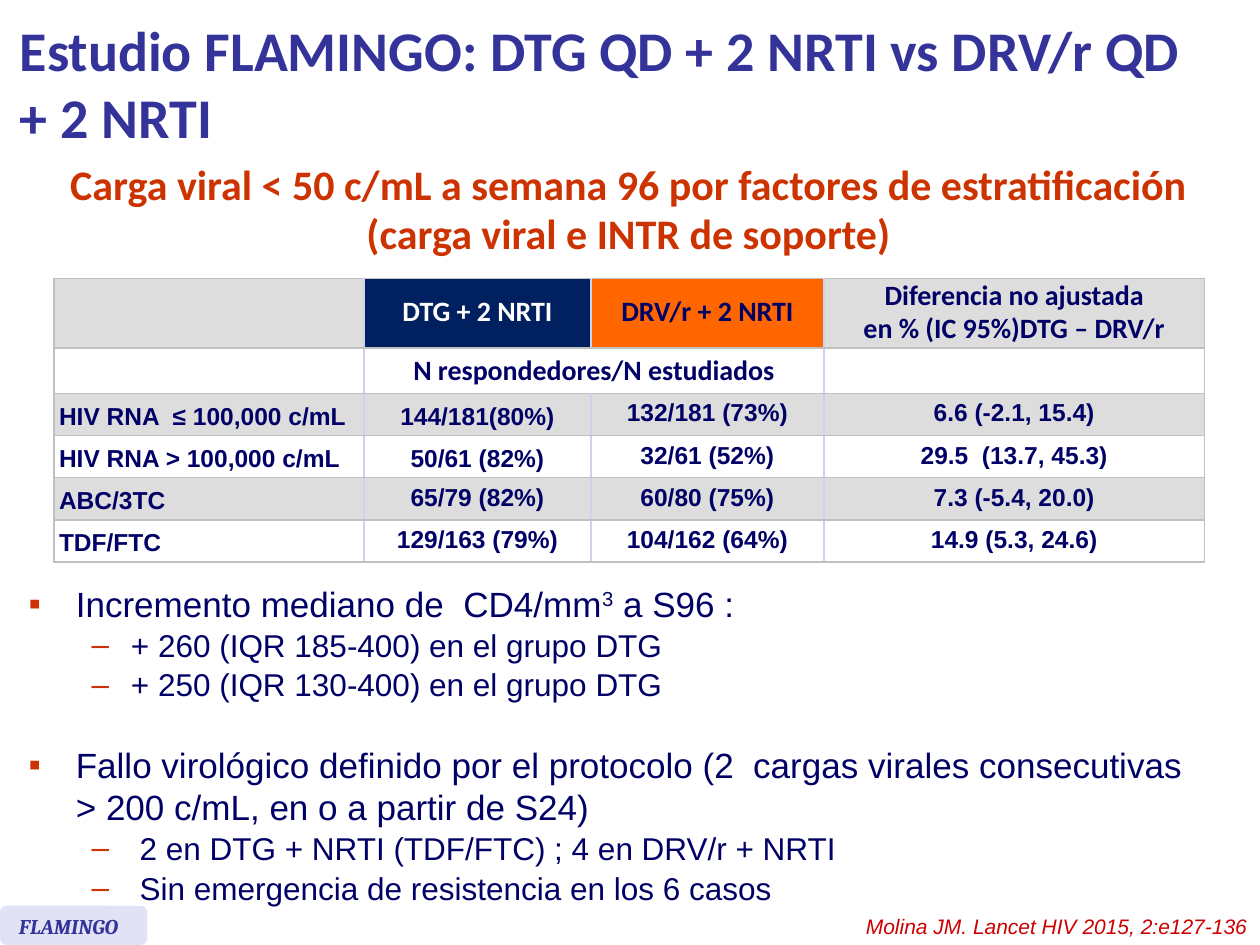
from lxml import etree
from pptx import Presentation
from pptx.dml.color import RGBColor
from pptx.enum import shapes, text
from pptx.oxml.ns import qn
from pptx.util import Cm, Pt

NAVY = RGBColor(0x00, 0x00, 0x66)
INDIGO = RGBColor(0x33, 0x33, 0x99)
RUST = RGBColor(0xCC, 0x33, 0x00)
RED = RGBColor(0xCC, 0x00, 0x00)
WHITE = RGBColor(0xFF, 0xFF, 0xFF)
GREY = RGBColor(0xDD, 0xDD, 0xDD)
DARK_BLUE = RGBColor(0x00, 0x20, 0x60)
ORANGE = RGBColor(0xFF, 0x66, 0x00)
LAVENDER = RGBColor(0xE2, 0xE2, 0xF6)
OUTER_LINE = RGBColor(0xC0, 0xC0, 0xC0)
INNER_LINE = RGBColor(0xD0, 0xD0, 0xF0)

CENTER = text.PP_ALIGN.CENTER
RIGHT = text.PP_ALIGN.RIGHT
MIDDLE = text.MSO_ANCHOR.MIDDLE

COLUMN_WIDTHS = [6.25, 4.57, 4.7, 7.67]
ROW_HEIGHTS = [1.41, 0.91] + [0.85] * 4
ROWS = [
    ["", "DTG + 2 NRTI", "DRV/r + 2 NRTI",
     "Diferencia no ajustada\nen % (IC 95%)DTG – DRV/r"],
    ["", "N respondedores/N estudiados", "", ""],
    ["HIV RNA  ≤ 100,000 c/mL", "144/181(80%)", "132/181 (73%)", "6.6 (-2.1, 15.4)"],
    ["HIV RNA > 100,000 c/mL", "50/61 (82%)", "32/61 (52%)", "29.5  (13.7, 45.3)"],
    ["ABC/3TC", "65/79 (82%)", "60/80 (75%)", "7.3 (-5.4, 20.0)"],
    ["TDF/FTC", "129/163 (79%)", "104/162 (64%)", "14.9 (5.3, 24.6)"],
]
HEADER_FILLS = [GREY, DARK_BLUE, ORANGE, GREY]

# level, space before in points, lines of the paragraph
FINDINGS = [
    (0, 0, ["Incremento mediano de  CD4/mm^3^ a S96 :"]),
    (1, 1, ["+ 260 (IQR 185-400) en el grupo DTG"]),
    (1, 1, ["+ 250 (IQR 130-400) en el grupo DTG"]),
    (0, 23, ["Fallo virológico definido por el protocolo (2  cargas virales consecutivas",
             "> 200 c/mL, en o a partir de S24)"]),
    (1, 1, [" 2 en DTG + NRTI (TDF/FTC) ; 4 en DRV/r + NRTI"]),
    (1, 1, [" Sin emergencia de resistencia en los 6 casos"]),
]
# bullet, left margin, hanging indent, text size
LEVELS = [("▪", Cm(0.95), Cm(0.95), 20), ("–", Cm(2.06), Cm(0.79), 18)]


def add_span(para, words, size, font, color, bold=False, italic=False):
    span = para.add_run()
    span.text = words
    span.font.size = Pt(size)
    span.font.name = font
    span.font.color.rgb = color
    span.font.bold = bold
    span.font.italic = italic
    return span


def add_box(parent, left, top, width, height, wrap=True):
    box = parent.add_textbox(Cm(left), Cm(top), Cm(width), Cm(height))
    box.text_frame.word_wrap = wrap
    return box.text_frame


def add_title(page):
    frame = add_box(page.shapes, 0.15, 0.13, 24.26, 3.07)
    frame.vertical_anchor = MIDDLE
    para = frame.paragraphs[0]
    add_span(para, "Estudio FLAMINGO: DTG QD + 2 NRTI vs DRV/r QD", 32, "Calibri", INDIGO, True)
    para.add_line_break()
    add_span(para, "+ 2 NRTI", 32, "Calibri", INDIGO, True)


def add_subtitle(page):
    frame = add_box(page.shapes, 0.86, 3.12, 23.62, 3.25, wrap=False)
    lines = ["Carga viral < 50 c/mL a semana 96 por factores de estratificación",
             "(carga viral e INTR de soporte)"]
    for index, line in enumerate(lines):
        para = frame.add_paragraph() if index else frame.paragraphs[0]
        para.alignment = CENTER
        para.line_spacing = Pt(27.6)
        add_span(para, line, 24, "Calibri", RUST, True)


def add_study_tag(page):
    group = page.shapes.add_group_shape()
    tag = group.shapes.add_shape(shapes.MSO_SHAPE.ROUNDED_RECTANGLE,
                                 Cm(0), Cm(18.26), Cm(2.97), Cm(0.79))
    tag.shadow.inherit = False
    tag.fill.solid()
    tag.fill.fore_color.rgb = LAVENDER
    tag.line.fill.background()
    frame = add_box(group.shapes, 0.13, 18.29, 2.84, 0.76)
    add_span(frame.paragraphs[0], "FLAMINGO", 12, "Cambria", INDIGO, True, True)


def set_borders(cell, colors):
    """Draw 1 pt lines; colors go left, right, top, bottom."""
    properties = cell._tc.get_or_add_tcPr()
    for side, color in zip("LRTB", colors):
        line = etree.SubElement(properties, qn(f"a:ln{side}"), w=str(Pt(1)))
        fill = etree.SubElement(line, qn("a:solidFill"))
        etree.SubElement(fill, qn("a:srgbClr"), val=str(color))


def fill_cell(cell, row, column):
    first, last = column == 0, column == len(COLUMN_WIDTHS) - 1
    set_borders(cell, [OUTER_LINE if first else INNER_LINE,
                       OUTER_LINE if last else INNER_LINE, OUTER_LINE, OUTER_LINE])
    cell.fill.solid()
    banded = WHITE if row % 2 else GREY
    cell.fill.fore_color.rgb = banded if row else HEADER_FILLS[column]
    cell.margin_left = cell.margin_right = cell.margin_top = cell.margin_bottom = Cm(0.1)
    cell.vertical_anchor = MIDDLE
    size, font = (16, "Calibri") if row < 2 else (14, "Arial")
    color = WHITE if (row, column) == (0, 1) else NAVY
    fixed_pitch = row > 1 and (first or (column == 1 and row < 4))
    for index, line in enumerate(ROWS[row][column].split("\n")):
        para = cell.text_frame.add_paragraph() if index else cell.text_frame.paragraphs[0]
        if not line:
            para.font.size = Pt(size)
            continue
        if not first:
            para.alignment = CENTER
        para.line_spacing = Pt(18.2) if fixed_pitch else 0.9 if row else 0.8
        if index:
            para.space_before = Pt(3.2)
        add_span(para, line, size, font, color, True)


def add_results_table(page):
    frame = page.shapes.add_table(len(ROWS), len(COLUMN_WIDTHS), Cm(1.09), Cm(5.61),
                                  Cm(sum(COLUMN_WIDTHS)), Cm(sum(ROW_HEIGHTS)))
    table = frame.table
    table.first_row = table.horz_banding = False
    for column, width in zip(table.columns, COLUMN_WIDTHS):
        column.width = Cm(width)
    for row, height in enumerate(ROW_HEIGHTS):
        table.rows[row].height = Cm(height)
        for column in range(len(COLUMN_WIDTHS)):
            fill_cell(table.cell(row, column), row, column)
    table.cell(1, 1).merge(table.cell(1, 2))


def set_bullet(para, mark, margin, hanging):
    properties = para._p.get_or_add_pPr()
    properties.set("marL", str(margin))
    properties.set("indent", str(-hanging))
    color = etree.SubElement(properties, qn("a:buClr"))
    etree.SubElement(color, qn("a:srgbClr"), val=str(RUST))
    etree.SubElement(properties, qn("a:buFont"), typeface="Arial")
    etree.SubElement(properties, qn("a:buChar"), char=mark)


def add_findings(page):
    """Bulleted list; text between carets is superscript."""
    frame = add_box(page.shapes, 0.33, 11.61, 25.07, 6.91)
    for index, (level, gap, lines) in enumerate(FINDINGS):
        para = frame.add_paragraph() if index else frame.paragraphs[0]
        mark, margin, hanging, size = LEVELS[level]
        para.level = level
        set_bullet(para, mark, margin, hanging)
        if index:
            para.space_before = Pt(gap)
        for number, line in enumerate(lines):
            if number:
                para.add_line_break()
            for part, words in enumerate(line.split("^")):
                span = add_span(para, words, size, "Arial", NAVY)
                if part % 2:
                    span._r.get_or_add_rPr().set("baseline", "30000")


def add_citation(page):
    para = add_box(page.shapes, 9.25, 18.29, 16.15, 0.76).paragraphs[0]
    para.alignment = RIGHT
    add_span(para, "Molina JM. Lancet HIV 2015, 2:e127-136", 12, "Arial", RED, italic=True)


def main():
    deck = Presentation()
    deck.slide_width, deck.slide_height = Cm(25.4), Cm(19.05)
    page = deck.slides.add_slide(deck.slide_layouts[6])
    add_subtitle(page)
    add_study_tag(page)
    add_title(page)
    add_results_table(page)
    add_findings(page)
    add_citation(page)
    deck.save("out.pptx")


if __name__ == "__main__":
    main()
